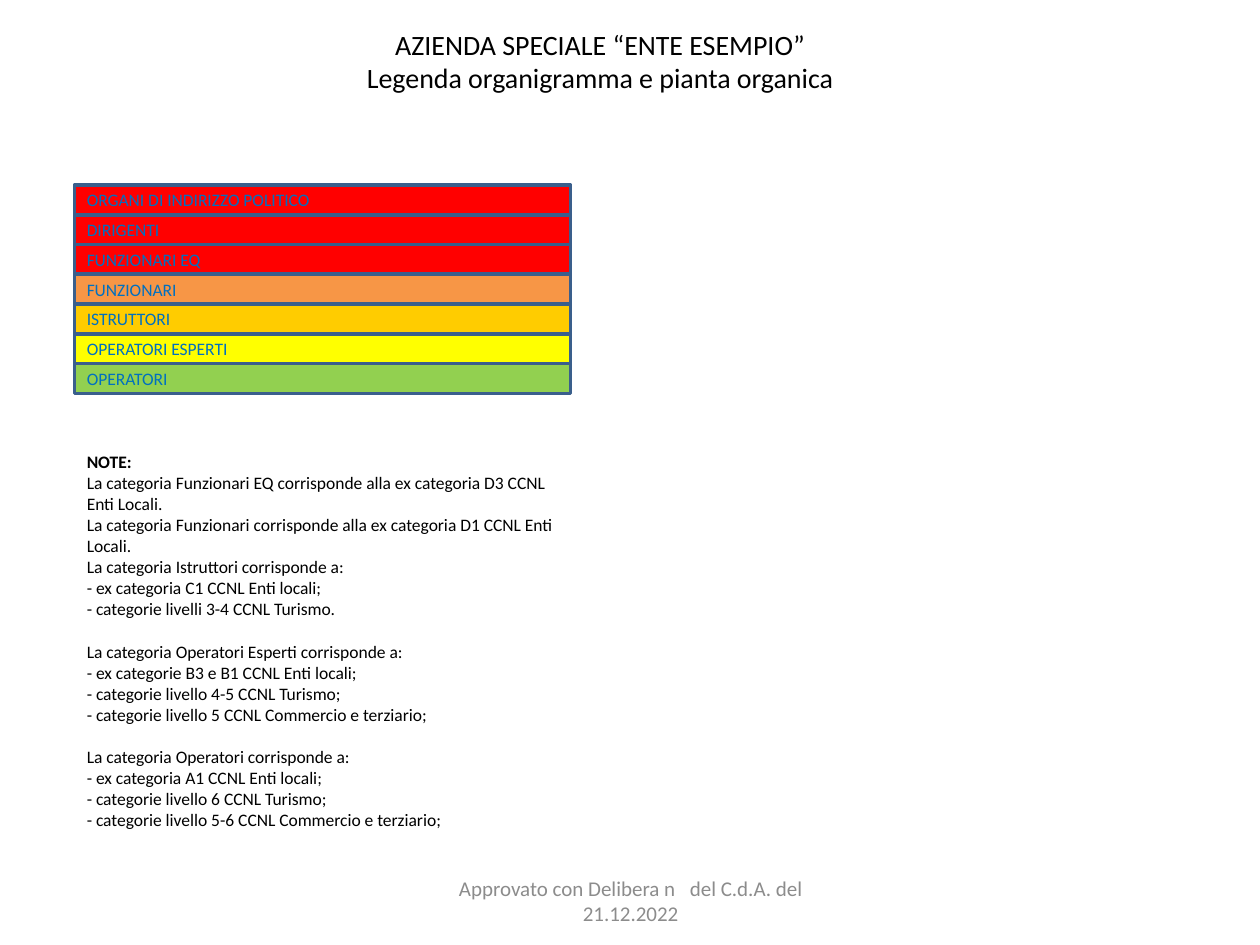
from pptx import Presentation
from pptx.dml.color import RGBColor
from pptx.enum.shapes import MSO_SHAPE as Preset
from pptx.enum.text import MSO_ANCHOR as Anchor, PP_ALIGN as Align
from pptx.util import Cm, Pt

LEFT, LEGEND_WIDTH = 1.5, 10
LEGEND_TOP, ROW_HEIGHT = 3.73, 0.6
NOTE_LINE = 12.2

CATEGORIES = [
    ("ORGANI DI INDIRIZZO POLITICO", "FF0000"),
    ("DIRIGENTI", "FF0000"),
    ("FUNZIONARI EQ", "FF0000"),
    ("FUNZIONARI", "F79646"),
    ("ISTRUTTORI", "FFCC00"),
    ("OPERATORI ESPERTI", "FFFF00"),
    ("OPERATORI", "92D050"),
]

NOTES = [
    [
        "NOTE:",
        "La categoria Funzionari EQ corrisponde alla ex categoria D3 CCNL Enti Locali.",
        "La categoria Funzionari corrisponde alla ex categoria D1 CCNL Enti Locali.",
        "La categoria Istruttori corrisponde a:",
        "- ex categoria C1 CCNL Enti locali;",
        "- categorie livelli 3-4 CCNL Turismo.",
    ],
    [
        "La categoria Operatori Esperti corrisponde a:",
        "- ex categorie B3 e B1 CCNL Enti locali;",
        "- categorie livello 4-5 CCNL Turismo;",
        "- categorie livello 5 CCNL Commercio e terziario;",
    ],
    [
        "La categoria Operatori corrisponde a:",
        "- ex categoria A1 CCNL Enti locali;",
        "- categorie livello 6 CCNL Turismo;",
        "- categorie livello 5-6 CCNL Commercio e terziario;",
    ],
]


def rgb(code):
    """Turn a hex string into a colour."""
    return RGBColor.from_string(code)


def apply_format(target, values):
    """Set every attribute named in values on target."""
    for name, value in values.items():
        setattr(target, name, value)


def add_words(paragraph, words, size, color, bold=False):
    """Append a formatted run to a paragraph and return it."""
    run = paragraph.add_run()
    run.text = words
    apply_format(run.font, {"name": "Calibri", "size": Pt(size), "bold": bold})
    run.font.color.rgb = rgb(color)
    return run


def start_paragraph(frame, first, align=Align.LEFT):
    """Return the first paragraph of a frame or a new one, aligned."""
    paragraph = frame.paragraphs[0] if first else frame.add_paragraph()
    paragraph.alignment = align
    return paragraph


def add_box(slide, bounds, fill, outline=None):
    """Add a filled rectangle and return its text frame."""
    box = slide.shapes.add_shape(Preset.RECTANGLE, *map(Cm, bounds))
    box.shadow.inherit = False
    box.fill.solid()
    box.fill.fore_color.rgb = rgb(fill)
    if outline:
        box.line.color.rgb = rgb(outline)
        box.line.width = Pt(2)
    else:
        box.line.fill.background()
    apply_format(box.text_frame, {"word_wrap": True, "vertical_anchor": Anchor.MIDDLE})
    return box.text_frame


def add_text_area(slide, bounds):
    """Add a wrapping text box and return its text frame."""
    frame = slide.shapes.add_textbox(*map(Cm, bounds)).text_frame
    apply_format(frame, {"word_wrap": True, "vertical_anchor": Anchor.MIDDLE})
    return frame


def add_title(slide):
    """Add the two-line heading."""
    frame = add_box(slide, (LEFT, 0.33, 21.2, 1.8), "FFFFFF")
    lines = ["AZIENDA SPECIALE “ENTE ESEMPIO”", "Legenda organigramma e pianta organica"]
    for index, line in enumerate(lines):
        add_words(start_paragraph(frame, index == 0, Align.CENTER), line, 16, "000000")


def add_legend(slide):
    """Stack one coloured row per staff category."""
    for index, (category, fill) in enumerate(CATEGORIES):
        bounds = (LEFT, LEGEND_TOP + index * ROW_HEIGHT, LEGEND_WIDTH, ROW_HEIGHT)
        frame = add_box(slide, bounds, fill, "3A5F8C")
        add_words(start_paragraph(frame, True), category, 10, "0070C0")


def add_notes(slide):
    """Add the explanatory notes, with a line's gap between groups."""
    frame = add_text_area(slide, (LEFT, 8.53, LEGEND_WIDTH, 9.2))
    frame.margin_bottom = Cm(0.55)
    for group_index, group in enumerate(NOTES):
        for line_index, line in enumerate(group):
            heading = group_index == line_index == 0
            paragraph = start_paragraph(frame, heading)
            if group_index and line_index == 0:
                paragraph.space_before = Pt(NOTE_LINE)
            add_words(paragraph, line, 10, "000000", heading)


def add_approval(slide):
    """Add the approval line, with a widened space for the number."""
    frame = add_text_area(slide, (8.69, 17.65, 8.05, 1.02))
    paragraph = start_paragraph(frame, True, Align.CENTER)
    add_words(paragraph, "Approvato con Delibera n", 12, "8C8C8C")
    number_gap = add_words(paragraph, " ", 12, "8C8C8C")
    number_gap.font._element.set("spc", "540")
    add_words(paragraph, "del C.d.A. del 21.12.2022", 12, "8C8C8C")


def main():
    """Build and save the legend slide."""
    deck = Presentation()
    apply_format(deck, {"slide_width": Cm(25.4), "slide_height": Cm(19.05)})
    slide = deck.slides.add_slide(deck.slide_layouts[6])
    for add_part in (add_title, add_legend, add_notes, add_approval):
        add_part(slide)
    deck.save("out.pptx")


if __name__ == "__main__":
    main()
